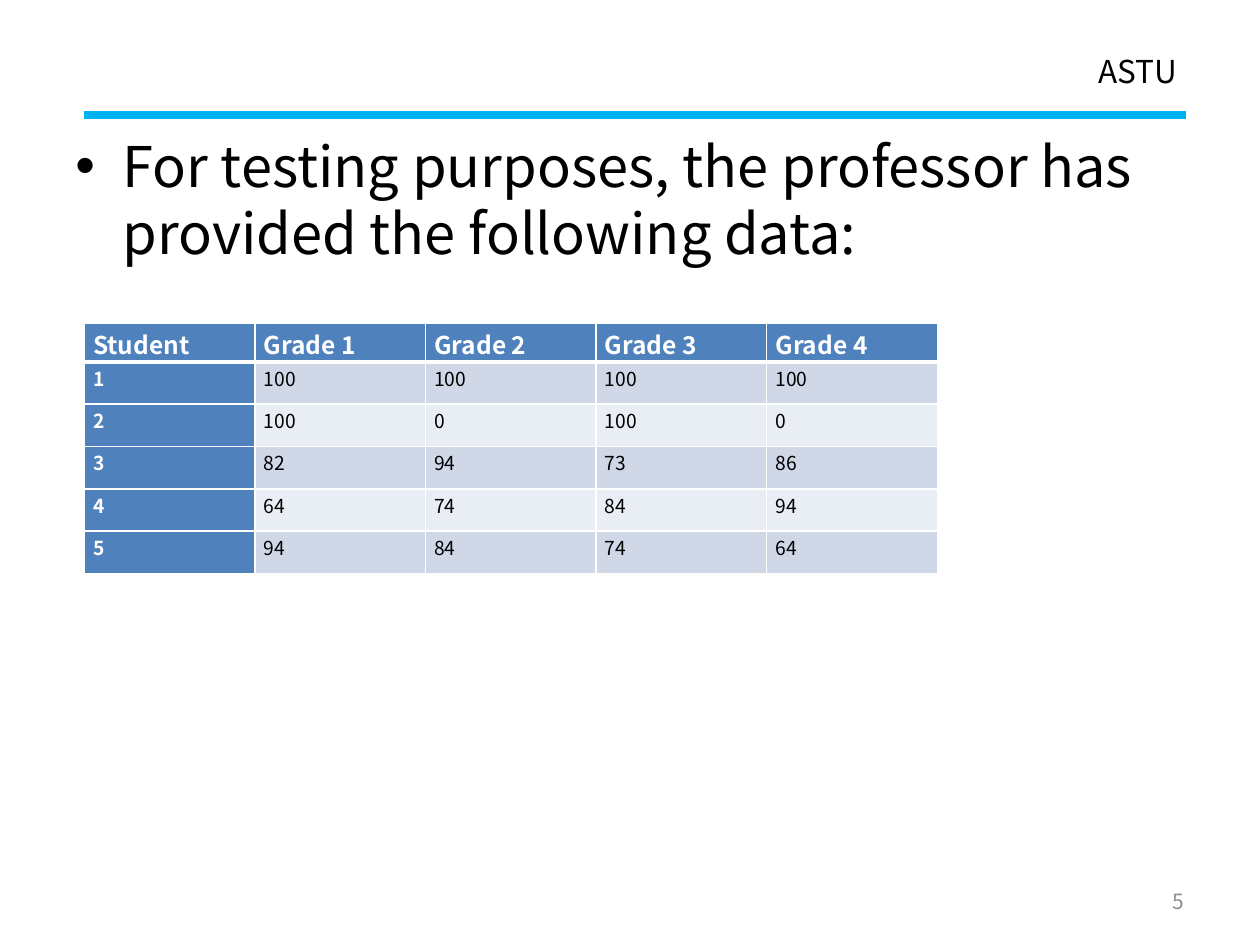
"""Builds a slide with a table of student grades."""
from lxml import etree
from pptx import Presentation
from pptx.dml.color import RGBColor
from pptx.enum.shapes import MSO_CONNECTOR
from pptx.enum.text import MSO_ANCHOR, MSO_AUTO_SIZE, PP_ALIGN
from pptx.oxml.ns import qn
from pptx.util import Pt

STRAIGHT = MSO_CONNECTOR.STRAIGHT
MIDDLE = MSO_ANCHOR.MIDDLE
TOP = MSO_ANCHOR.TOP
GROW = MSO_AUTO_SIZE.SHAPE_TO_FIT_TEXT
FIXED = MSO_AUTO_SIZE.NONE
LEFT = PP_ALIGN.LEFT
RIGHT = PP_ALIGN.RIGHT

FACE = "Noto Sans CJK KR"
COLORS = {
    "rule": "00B0F0",
    "head": "4F81BD",
    "odd": "D0D8E8",
    "even": "E9EDF4",
    "ink": "000000",
    "white": "FFFFFF",
    "gray": "8C8C8C",
}
GRADES = [
    ["Student", "Grade 1", "Grade 2", "Grade 3", "Grade 4"],
    ["1", "100", "100", "100", "100"],
    ["2", "100", "0", "100", "0"],
    ["3", "82", "94", "73", "86"],
    ["4", "64", "74", "84", "94"],
    ["5", "94", "84", "74", "64"],
]


def apply(target, values):
    for name, value in values.items():
        setattr(target, name, value)


def tint(name):
    return RGBColor.from_string(COLORS[name])


def write(frame, text, size, color, bold=False):
    para = frame.paragraphs[0]
    run = para.add_run()
    run.text = text
    apply(run.font, {"name": FACE, "size": Pt(size), "bold": bold})
    run.font.color.rgb = tint(color)
    return para


def add_text(slide, place, text, size, color, align=LEFT, anchor=TOP, fit=FIXED):
    box = slide.shapes.add_textbox(*map(Pt, place))
    frame = box.text_frame
    apply(frame, {"word_wrap": True, "auto_size": fit, "vertical_anchor": anchor})
    para = write(frame, text, size, color)
    para.alignment = align
    return para


def add_bullet(para, indent):
    props = para._p.get_or_add_pPr()
    props.set("marL", str(Pt(indent)))
    props.set("indent", str(-Pt(indent)))
    etree.SubElement(props, qn("a:buFont"), typeface="Arial")
    etree.SubElement(props, qn("a:buChar"), char="•")


def add_rule(slide, left, right, top):
    rule = slide.shapes.add_connector(STRAIGHT, Pt(left), Pt(top), Pt(right), Pt(top))
    rule.line.color.rgb = tint("rule")
    rule.line.width = Pt(4.5)
    etree.SubElement(rule._element.spPr, qn("a:effectLst"))


def add_edges(cell, top, bottom):
    props = cell._tc.get_or_add_tcPr()
    for side, width in {"L": 1, "R": 1, "T": top, "B": bottom}.items():
        edge = etree.SubElement(props, qn("a:ln" + side), w=str(Pt(width)))
        fill = etree.SubElement(edge, qn("a:solidFill"))
        etree.SubElement(fill, qn("a:srgbClr"), val=COLORS["white"])


def fill_cell(cell, text, row, col):
    head = row == 0 or col == 0
    add_edges(cell, 3 if row == 1 else 1, 3 if row == 0 else 1)
    cell.fill.solid()
    cell.fill.fore_color.rgb = tint("head" if head else "odd" if row % 2 else "even")
    apply(cell, {
        "margin_left": Pt(5),
        "margin_right": Pt(5),
        "margin_top": Pt(0),
        "margin_bottom": Pt(0),
    })
    size = 14 if row == 0 else 11
    para = write(cell.text_frame, text, size, "white" if head else "ink", head)
    para.line_spacing = 1.07


def add_grades(slide, left, top, width, first, height):
    rows, cols = len(GRADES), len(GRADES[0])
    total = first + height * (rows - 1)
    place = map(Pt, (left, top, width * cols, total))
    table = slide.shapes.add_table(rows, cols, *place).table
    table.first_col = True
    for col in table.columns:
        col.width = Pt(width)
    for row, texts in enumerate(GRADES):
        table.rows[row].height = Pt(height if row else first)
        for col, text in enumerate(texts):
            fill_cell(table.cell(row, col), text, row, col)


def main():
    deck = Presentation()
    deck.slide_width, deck.slide_height = Pt(720), Pt(540)
    slide = deck.slides.add_slide(deck.slide_layouts[6])
    add_rule(slide, 48, 677.5, 65.8)
    add_text(slide, (620.5, 26, 63, 36), "ASTU", 18, "ink", fit=GROW)
    lead = "For testing purposes, the professor has provided the following data:"
    para = add_text(slide, (36, 71.5, 648, 411), lead, 32, "ink")
    add_bullet(para, 27)
    add_text(slide, (516, 500.5, 168, 29), "5", 12, "gray", RIGHT, MIDDLE)
    add_grades(slide, 48.2, 185, 97.5, 21.8, 24.2)
    deck.save("out.pptx")


if __name__ == "__main__":
    main()
